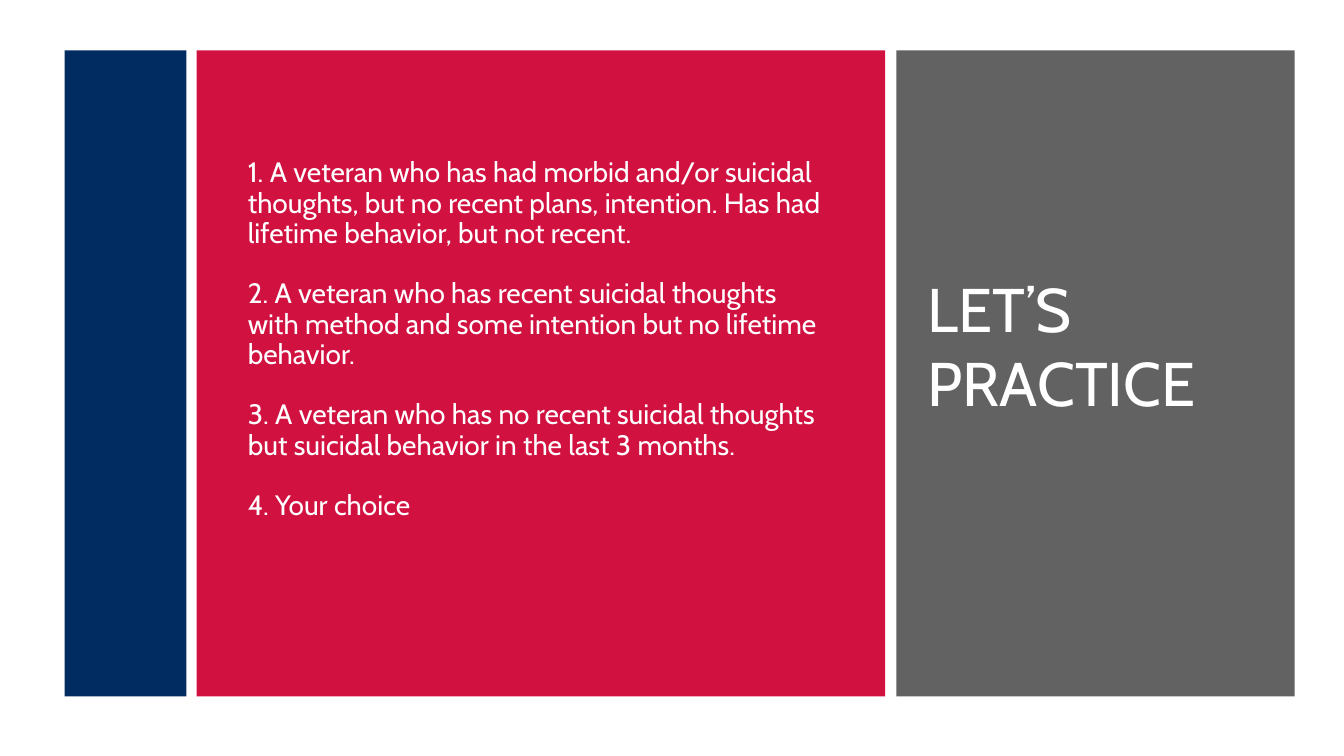
from pptx import Presentation
from pptx.dml.color import RGBColor
from pptx.enum.shapes import MSO_SHAPE
from pptx.enum.text import MSO_ANCHOR
from pptx.util import Inches, Pt

RECTANGLE = MSO_SHAPE.RECTANGLE
MIDDLE = MSO_ANCHOR.MIDDLE
WHITE = RGBColor(0xFF, 0xFF, 0xFF)
RED = RGBColor(0xD1, 0x12, 0x41)
GRAY = RGBColor(0x62, 0x62, 0x62)
NAVY = RGBColor(0x00, 0x2C, 0x61)
FONT = "Cabin"
WIDTH, HEIGHT = 13.33, 7.5
PANEL_TOP, PANEL_HEIGHT = 0.5, 6.41

SCENARIOS = [
    "1. A veteran who has had morbid and/or suicidal thoughts, but no recent "
    "plans, intention. Has had lifetime behavior, but not recent.",
    "2. A veteran who has recent suicidal thoughts with method and some "
    "intention but no lifetime behavior.",
    "3. A veteran who has no recent suicidal thoughts but suicidal behavior "
    "in the last 3 months.",
    "4. Your choice",
]


def add_panel(s, left, top, width, height, color):
    """Add a plain filled rectangle."""
    sp = s.shapes.add_shape(RECTANGLE, Inches(left), Inches(top),
                            Inches(width), Inches(height))
    sp.shadow.inherit = False
    sp.fill.solid()
    sp.fill.fore_color.rgb = color
    sp.line.fill.background()


def add_text(s, left, top, width, height, paragraphs, size, spacing=1.0, gap=0):
    """Add white, vertically centred paragraphs and return their text frame."""
    tb = s.shapes.add_textbox(Inches(left), Inches(top),
                              Inches(width), Inches(height))
    tf = tb.text_frame
    tf.word_wrap = True
    tf.vertical_anchor = MIDDLE
    for i, text in enumerate(paragraphs):
        p = tf.add_paragraph() if i else tf.paragraphs[0]
        p.line_spacing = spacing
        p.space_before = Pt(gap if i else 0)
        r = p.add_run()
        r.text = text
        r.font.name = FONT
        r.font.size = Pt(size)
        r.font.color.rgb = WHITE
    return tf


def main():
    """Build the practice slide."""
    prs = Presentation()
    prs.slide_width, prs.slide_height = Inches(WIDTH), Inches(HEIGHT)
    s = prs.slides.add_slide(prs.slide_layouts[6])
    add_panel(s, 0, 0, WIDTH, HEIGHT, WHITE)
    for left, width, color in [(0.64, 1.21, NAVY), (1.95, 6.83, RED),
                               (8.89, 3.95, GRAY)]:
        add_panel(s, left, PANEL_TOP, width, PANEL_HEIGHT, color)
    tf = add_text(s, 2.36, 0.93, 6.04, 5.19, SCENARIOS, 20, 0.9, 21.6)
    tf.margin_right = Inches(0.22)
    tf.margin_bottom = Inches(0.35)
    add_text(s, 9.1, 0.73, 3.44, 5.39, ["LET’S PRACTICE"], 44)
    prs.save("out.pptx")


if __name__ == "__main__":
    main()
